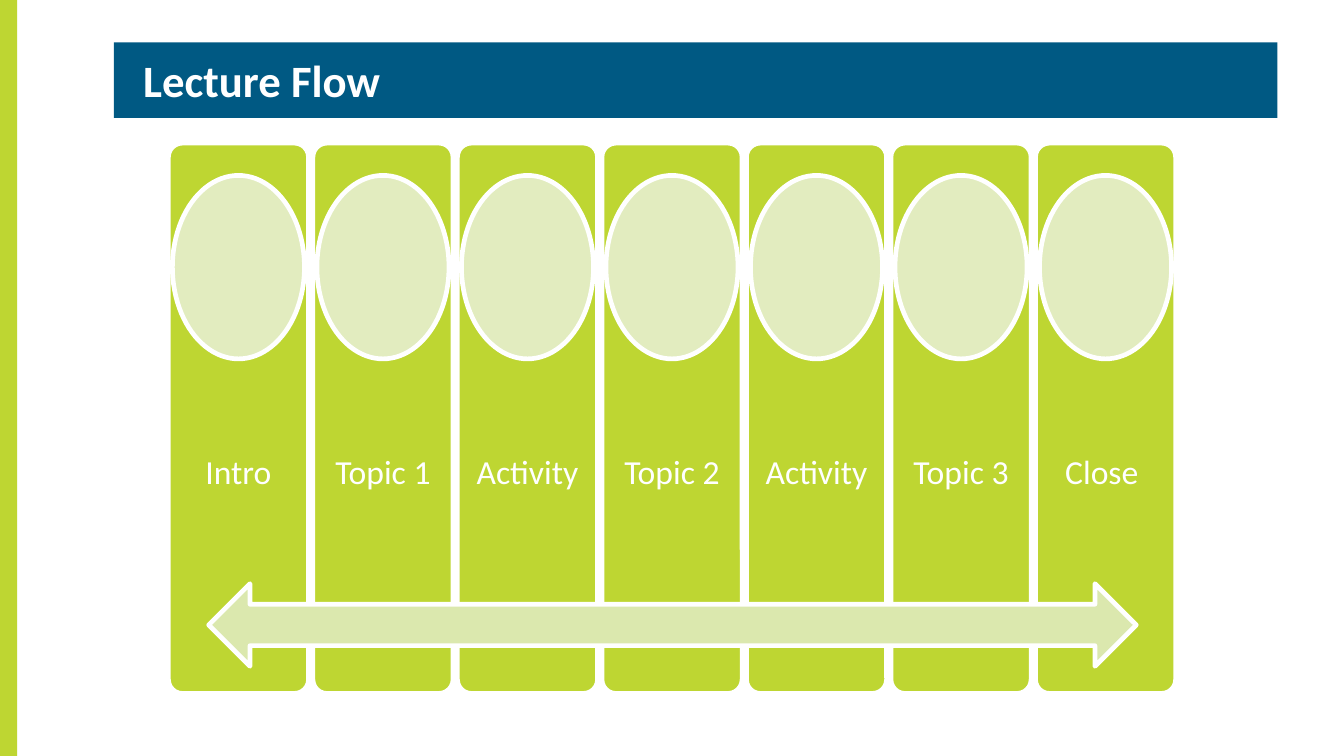
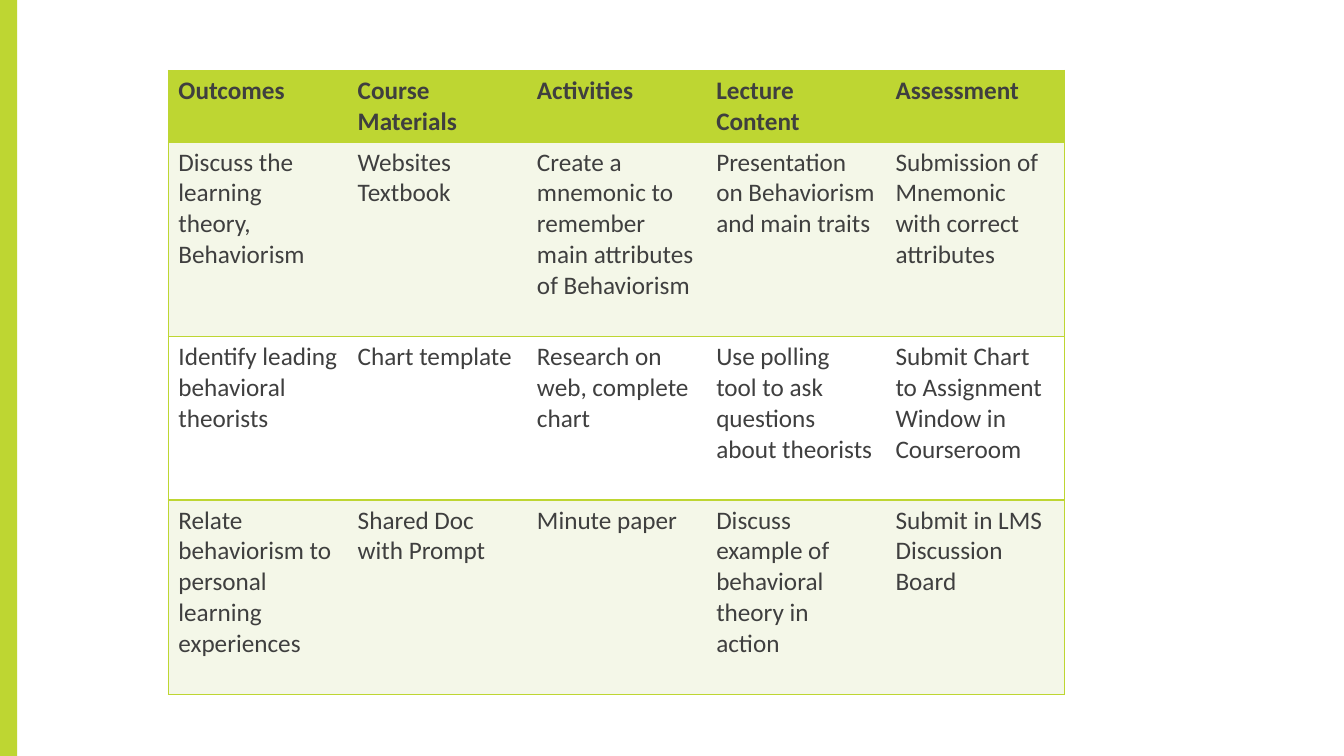
from lxml import etree
from pptx import Presentation
from pptx.dml.color import RGBColor
from pptx.enum.shapes import MSO_SHAPE
from pptx.enum.text import MSO_ANCHOR, PP_ALIGN
from pptx.oxml.ns import qn
from pptx.util import Inches, Pt

RECTANGLE = MSO_SHAPE.RECTANGLE
ROUNDED = MSO_SHAPE.ROUNDED_RECTANGLE
OVAL = MSO_SHAPE.OVAL
DOUBLE_ARROW = MSO_SHAPE.LEFT_RIGHT_ARROW
MIDDLE = MSO_ANCHOR.MIDDLE
LEFT, CENTER = PP_ALIGN.LEFT, PP_ALIGN.CENTER

FONT = "Calibri"
COLORS = {
    "lime": "BED632",
    "blue": "005983",
    "white": "FFFFFF",
    "oval": "E2ECBF",
    "arrow": "DBE8AE",
    "text": "3F3F3F",
    "row": "F4F7E8",
}
TITLE_ONLY, BLANK = 5, 6


def add_filled_shape(slide, kind, box, fill, outlined=True):
    shape = slide.shapes.add_shape(kind, *[Inches(length) for length in box])
    shape.shadow.inherit = False
    shape.fill.solid()
    shape.fill.fore_color.rgb = RGBColor.from_string(COLORS[fill])
    if outlined:
        shape.line.color.rgb = RGBColor.from_string(COLORS["white"])
        shape.line.width = Pt(3.35)
    else:
        shape.line.fill.background()
    return shape


def format_text(text_frame, size, color, bold=False, alignment=LEFT):
    for paragraph in text_frame.paragraphs:
        paragraph.alignment = alignment
        for run in paragraph.runs:
            run.font.name = FONT
            run.font.size = Pt(size)
            run.font.bold = bold
            run.font.color.rgb = RGBColor.from_string(COLORS[color])


presentation = Presentation()
presentation.slide_width = Inches(13.33)
presentation.slide_height = Inches(7.5)

flow_slide, plan_slide = [
    presentation.slides.add_slide(presentation.slide_layouts[layout])
    for layout in (TITLE_ONLY, BLANK)
]
for slide in (flow_slide, plan_slide):
    add_filled_shape(slide, RECTANGLE, (0, 0, 0.17, 7.5), "lime", outlined=False)

# Slide 1: lecture flow
title = flow_slide.shapes.title
title.left, title.top = Inches(1.13), Inches(0.42)
title.width, title.height = Inches(11.54), Inches(0.75)
title.fill.solid()
title.fill.fore_color.rgb = RGBColor.from_string(COLORS["blue"])
title.text_frame.text = "Lecture Flow"
title.text_frame.margin_left = Inches(0.29)
title.text_frame.margin_bottom = Inches(0.07)
title.text_frame.vertical_anchor = MIDDLE
format_text(title.text_frame, 32, "white", bold=True)

STEPS = ["Intro", "Topic 1", "Activity", "Topic 2", "Activity", "Topic 3", "Close "]
FIRST_LEFT, LAST_LEFT, STEP_WIDTH = 1.67, 10.27, 1.39
STEP_PITCH = (LAST_LEFT - FIRST_LEFT) / (len(STEPS) - 1)
OVAL_WIDTH = 1.31

for index, step in enumerate(STEPS):
    left = FIRST_LEFT + index * STEP_PITCH
    card = add_filled_shape(flow_slide, ROUNDED, (left, 1.42, STEP_WIDTH, 5.46), "lime")
    card.adjustments[0] = 0.1
    frame = card.text_frame
    frame.text = step
    frame.vertical_anchor = MIDDLE
    frame.margin_left = frame.margin_right = Inches(0.05)
    frame.margin_top, frame.margin_bottom = Inches(2.18), Inches(1.09)
    format_text(frame, 24, "white", alignment=CENTER)
    frame.paragraphs[0].line_spacing = 0.9
    oval_left = left + (STEP_WIDTH - OVAL_WIDTH) / 2
    add_filled_shape(flow_slide, OVAL, (oval_left, 1.74, OVAL_WIDTH, 1.82), "oval")

add_filled_shape(flow_slide, DOUBLE_ARROW, (2.07, 5.79, 9.2, 0.82), "arrow")

# Slide 2: course plan table
PLAN = [
    ["Outcomes", "Course Materials", "Activities", "Lecture Content", "Assessment"],
    [
        "Discuss the learning theory, Behaviorism",
        "Websites Textbook",
        "Create a mnemonic to remember main attributes of Behaviorism",
        "Presentation on Behaviorism and main traits",
        "Submission of Mnemonic with correct attributes",
    ],
    [
        "Identify leading behavioral theorists",
        "Chart template",
        "Research on web, complete chart",
        "Use polling tool to ask questions about theorists",
        "Submit Chart to Assignment Window in Courseroom",
    ],
    [
        "Relate behaviorism to personal learning experiences",
        "Shared Doc with Prompt",
        "Minute paper",
        "Discuss example of behavioral theory in action",
        "Submit in LMS Discussion Board",
    ],
]
ROW_HEIGHTS = [0.71, 1.93, 1.62, 1.93]
ROW_FILLS = ["lime", "row", "white", "row"]
TABLE_WIDTH = 8.89
column_count = len(PLAN[0])

table = plan_slide.shapes.add_table(
    len(PLAN), column_count, Inches(1.67), Inches(0.7),
    Inches(TABLE_WIDTH), Inches(sum(ROW_HEIGHTS)),
).table

for row_index, texts in enumerate(PLAN):
    table.rows[row_index].height = Inches(ROW_HEIGHTS[row_index])
    for column_index, text in enumerate(texts):
        cell = table.cell(row_index, column_index)
        cell.text_frame.text = text
        format_text(cell.text_frame, 18, "text", bold=row_index == 0)

        # Lines run around the table and between rows, not between columns
        borders = {
            "a:lnL": column_index == 0,
            "a:lnR": column_index == column_count - 1,
            "a:lnT": True,
            "a:lnB": True,
        }
        properties = cell._tc.get_or_add_tcPr()
        for tag, visible in borders.items():
            line = etree.SubElement(properties, qn(tag), w=str(Pt(1)))
            if visible:
                fill = etree.SubElement(line, qn("a:solidFill"))
                etree.SubElement(fill, qn("a:srgbClr"), val=COLORS["lime"])
            else:
                etree.SubElement(line, qn("a:noFill"))
        cell.fill.solid()
        cell.fill.fore_color.rgb = RGBColor.from_string(COLORS[ROW_FILLS[row_index]])

presentation.save("out.pptx")
